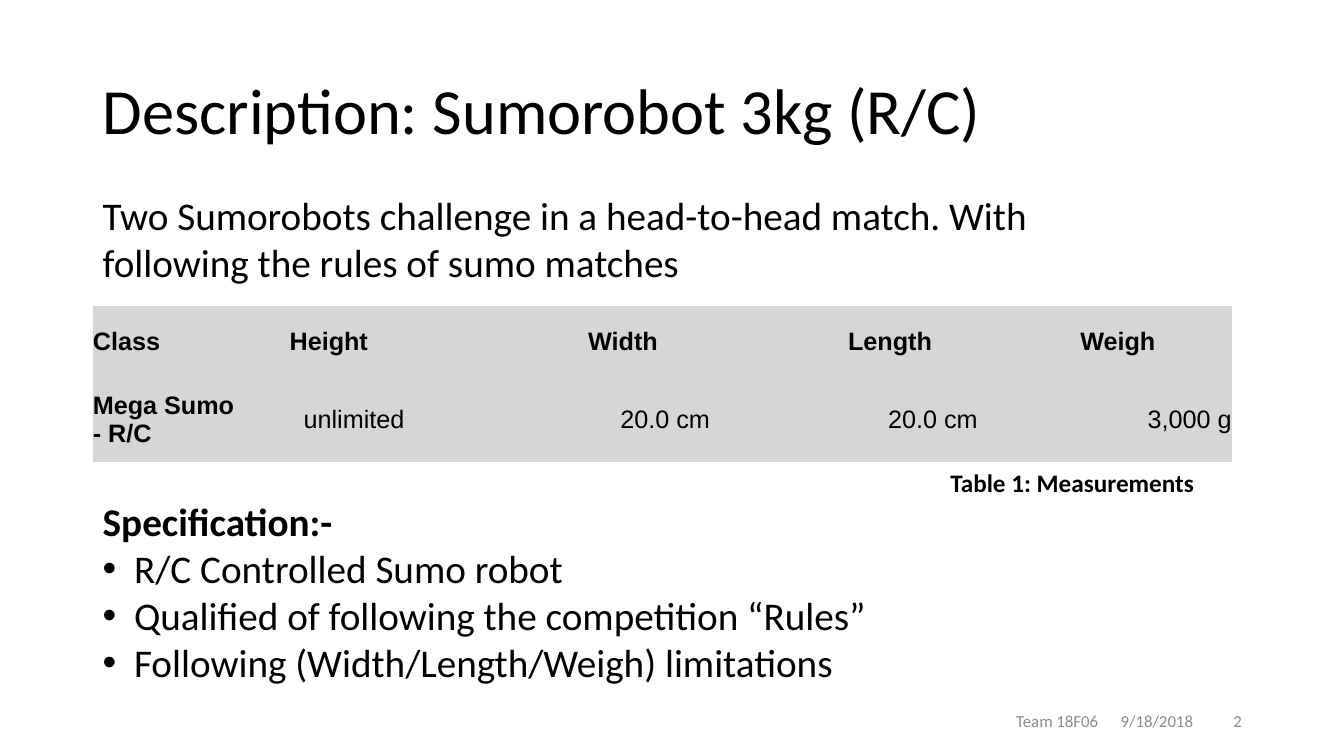
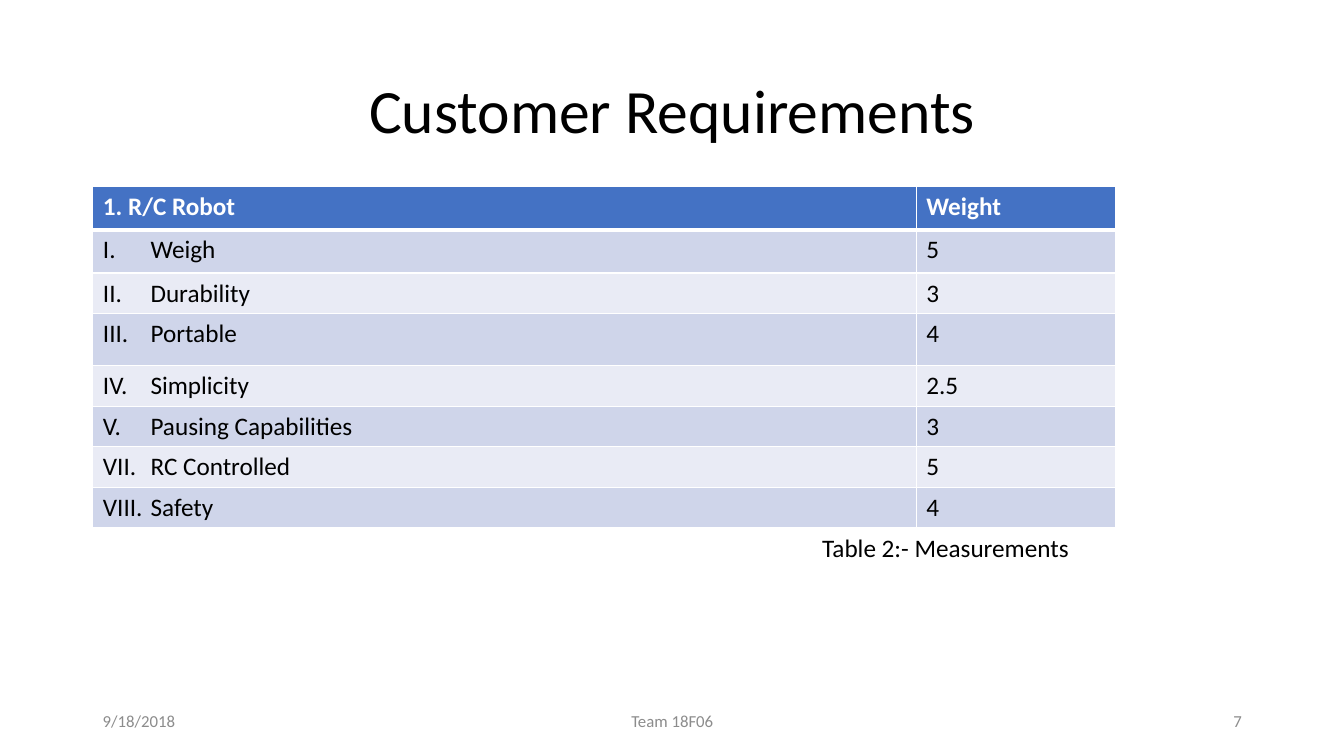
import pptx
import pptx.util
import pptx.dml.color
import pptx.enum.text
import pptx.oxml.ns
from lxml import etree

Cm, Pt = pptx.util.Cm, pptx.util.Pt
ALIGN = pptx.enum.text.PP_ALIGN
MIDDLE = pptx.enum.text.MSO_ANCHOR.MIDDLE
BLACK, WHITE, GREY = "000000", "FFFFFF", "8C8C8C"
PANEL, HEADER, BANDS = "D6D6D6", "4472C4", ("CFD5EA", "E9EBF5")
LEFT = 2.34
FOOTER_TOP, LINE_HEIGHT = 17.65, 1.02

TITLE = dict(name="Calibri", size=Pt(44), bold=False)
BODY = dict(name="Calibri", size=Pt(28), bold=False)
LABEL = dict(name="Calibri", size=Pt(18), bold=False)
STRONG = dict(LABEL, bold=True)
DATA = dict(name="Arial", size=Pt(18), bold=False)
FOOTER = dict(name="Calibri", size=Pt(12), bold=False)


def rgb(value):
    """Return the colour of a hex string."""
    return pptx.dml.color.RGBColor.from_string(value)


def apply(target, values):
    """Set each attribute in a dict on the target."""
    for name, value in values.items():
        setattr(target, name, value)


def add_node(parent, tag, **attrs):
    """Append a DrawingML element and return it."""
    node = etree.SubElement(parent, pptx.oxml.ns.qn("a:" + tag))
    for name, value in attrs.items():
        node.set(name, str(value))
    return node


def write(p, text, fmt, colour=BLACK, align=ALIGN.LEFT):
    """Write one formatted run into a paragraph."""
    p.alignment = align
    r = p.add_run()
    r.text = text
    apply(r.font, fmt)
    r.font.color.rgb = rgb(colour)


def hang(p, indent, tag, **attrs):
    """Give a paragraph a hanging bullet or number."""
    pPr = p._p.get_or_add_pPr()
    pPr.set("marL", str(Cm(indent)))
    pPr.set("indent", str(-Cm(indent)))
    add_node(pPr, "buFont", typeface="Arial" if tag == "buChar" else "+mj-lt")
    add_node(pPr, tag, **attrs)


def add_text(s, box, text, fmt, colour=BLACK, align=ALIGN.LEFT, **frame):
    """Add a wrapped text box and return its text frame."""
    tf = s.shapes.add_textbox(*map(Cm, box)).text_frame
    apply(tf, dict(frame, word_wrap=True))
    write(tf.paragraphs[0], text, fmt, colour, align)
    return tf


def add_title(s, text, align=ALIGN.LEFT, size=44):
    """Add the slide title."""
    box = (LEFT, LINE_HEIGHT, 29.21, 3.68)
    tf = add_text(s, box, text, dict(TITLE, size=Pt(size)),
                  align=align, vertical_anchor=MIDDLE)
    tf.paragraphs[0].line_spacing = 0.9


def add_footer(s, number, date_left, team_left):
    """Add the date, team and slide number."""
    parts = (("9/18/2018", date_left, 5, ALIGN.LEFT),
             ("Team 18F06", team_left, 11.43, ALIGN.CENTER),
             (number, 23.93, 7.62, ALIGN.RIGHT))
    for text, left, width, align in parts:
        add_text(s, (left, FOOTER_TOP, width, LINE_HEIGHT), text, FOOTER,
                 GREY, align, vertical_anchor=MIDDLE)


def add_table(s, top, widths, heights):
    """Add an unbanded table with given column widths and row heights."""
    table = s.shapes.add_table(
        len(heights), len(widths), Cm(LEFT), Cm(top),
        Cm(sum(widths)), Cm(sum(heights))).table
    apply(table, dict(first_row=False, horz_banding=False))
    for column, width in zip(table.columns, widths):
        column.width = Cm(width)
    for row, height in zip(table.rows, heights):
        row.height = Cm(height)
    return table


def style_cell(cell, fill, top=0, bottom=0, side=0):
    """Fill a cell and draw its white borders, zero meaning none."""
    tcPr = cell._tc.get_or_add_tcPr()
    for edge, width in zip("LRTB", (side, side, top, bottom)):
        line = add_node(tcPr, "ln" + edge, w=Pt(width))
        if width:
            add_node(add_node(line, "solidFill"), "srgbClr", val=WHITE)
        else:
            add_node(line, "noFill")
    cell.fill.solid()
    cell.fill.fore_color.rgb = rgb(fill)


def add_measure_row(s, top, height, widths, texts, align, fmt):
    """Add a one-row grey table with a bold left-aligned first cell."""
    table = add_table(s, top, widths, [height])
    margins = dict.fromkeys(
        ("margin_left", "margin_right", "margin_top", "margin_bottom"), 0)
    for i, (cell, text) in enumerate(zip(table.rows[0].cells, texts)):
        apply(cell, dict(margins, vertical_anchor=MIDDLE))
        write(cell.text_frame.paragraphs[0], text,
              fmt if i else dict(DATA, bold=True),
              align=align if i else ALIGN.LEFT)
        style_cell(cell, PANEL)


def add_weights(s, top, header, requirements):
    """Add the banded table of numbered requirements and weights."""
    heights = [1.09, 1.09, 1.02, 1.32] + [1.02] * 4
    table = add_table(s, top, [20.75, 5.03], heights)
    for cell, text in zip(table.rows[0].cells, header):
        write(cell.text_frame.paragraphs[0], text, STRONG, WHITE)
        style_cell(cell, HEADER, 1, 3, 1)
    for i, (number, name, weight) in enumerate(requirements):
        cells = table.rows[i + 1].cells
        for cell, text in zip(cells, (name, weight)):
            write(cell.text_frame.paragraphs[0], text, LABEL)
            style_cell(cell, BANDS[i % 2], 1 if i else 3, 1, 1)
        hang(cells[0].text_frame.paragraphs[0], 1.2, "buAutoNum",
             type="romanUcPeriod", startAt=number)


def build_description(s):
    """Build the robot description slide."""
    add_title(s, "Description: Sumorobot 3kg (R/C)", size=46)
    add_text(s, (LEFT, 4.7, 26.75, 2.64),
             "Two Sumorobots challenge in a head-to-head match. "
             "With following the rules of sumo matches", BODY)
    add_measure_row(s, 7.72, 1.8, [2.39, 7.11, 7.72, 5.74, 5.74],
                    ["Class", "Height", "Width", "Length", "Weigh"],
                    ALIGN.CENTER, dict(DATA, bold=True))
    add_measure_row(s, 9.52, 2.13, [3.68, 4.17, 7.7, 6.75, 6.4],
                    ["Mega Sumo - R/C", "unlimited", "20.0 cm", "20.0 cm",
                     "3,000 g"], ALIGN.RIGHT, DATA)
    add_text(s, (23.7, 11.66, 7.37, LINE_HEIGHT),
             "Table 1: Measurements", STRONG)
    tf = add_text(s, (LEFT, 12.4, 28.73, 5.05), "Specification:-",
                  dict(BODY, bold=True))
    for text in ("R/C Controlled Sumo robot",
                 "Qualified of following the competition “Rules”",
                 "Following (Width/Length/Weigh) limitations"):
        p = tf.add_paragraph()
        write(p, text, BODY)
        hang(p, 0.79, "buChar", char="•")
    add_footer(s, "2", 27.99, 20.93)


def build_requirements(s):
    """Build the customer requirements slide."""
    add_title(s, "Customer Requirements", ALIGN.CENTER)
    add_weights(s, 4.7, ("1. R/C Robot", "Weight"), (
        (1, "Weigh", "5"),
        (2, "Durability", "3"),
        (3, "Portable", "4"),
        (4, "Simplicity", "2.5"),
        (5, "Pausing Capabilities", "3"),
        (7, "RC Controlled", "5"),
        (8, "Safety", "4")))
    add_text(s, (20.47, 13.28, 7.65, LINE_HEIGHT),
             "Table 2:- Measurements", LABEL)
    add_footer(s, "7", LEFT, 11.23)


def main():
    """Build and save the presentation."""
    prs = pptx.Presentation()
    apply(prs, dict(slide_width=Cm(33.87), slide_height=Cm(19.05)))
    for build in (build_description, build_requirements):
        build(prs.slides.add_slide(prs.slide_layouts[6]))
    prs.save("out.pptx")


if __name__ == "__main__":
    main()
